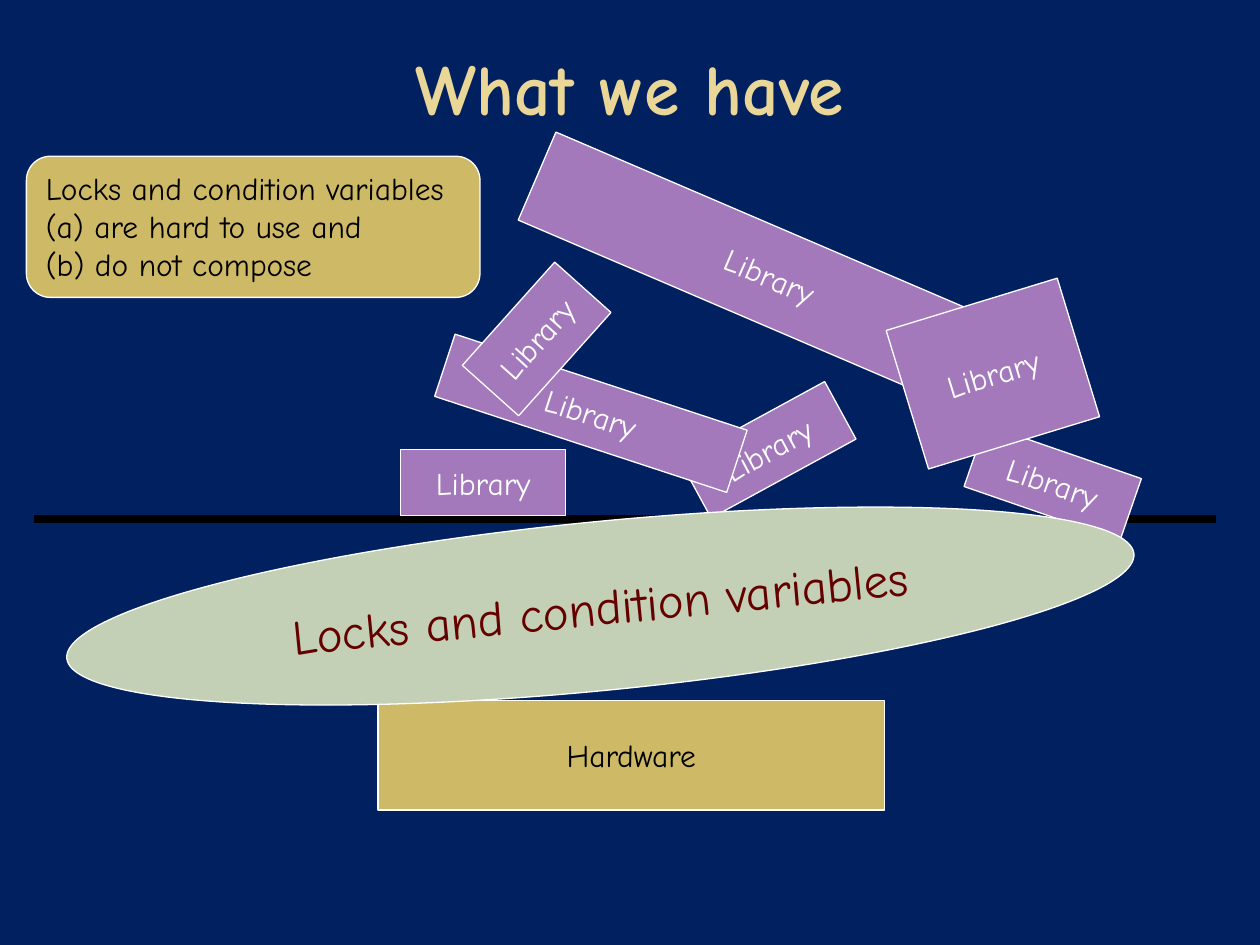
from lxml import etree
from pptx import Presentation
from pptx.dml.color import RGBColor
from pptx.enum.shapes import MSO_CONNECTOR, MSO_SHAPE
from pptx.enum.text import MSO_ANCHOR, PP_ALIGN
from pptx.oxml.ns import qn
from pptx.util import Inches, Pt

RECT = MSO_SHAPE.RECTANGLE
ELLIPSE = MSO_SHAPE.OVAL
CALLOUT = MSO_SHAPE.ROUNDED_RECTANGULAR_CALLOUT
STRAIGHT = MSO_CONNECTOR.STRAIGHT
CENTER, LEFT = PP_ALIGN.CENTER, PP_ALIGN.LEFT
TOP, MIDDLE = MSO_ANCHOR.TOP, MSO_ANCHOR.MIDDLE

FONT = "Comic Neue"
COLORS = {
    "background": "002060",
    "title": "EAD696",
    "gold": "CEB966",
    "library": "A379BB",
    "locks": "C4D0B5",
    "locks_text": "640000",
    "white": "FFFFFF",
    "black": "000000",
}
LIBRARIES = [
    (3.18, 3.57, 1.31, 0.52, 0),
    (5.44, 3.31, 1.31, 0.52, 331.4),
    (7.7, 3.57, 1.31, 0.52, 19.1),
    (3.47, 3.02, 2.44, 0.52, 18.2),
    (3.71, 2.39, 1.1, 0.6, 311.8),
    (4.1, 1.81, 4.02, 0.76, 23.2),
    (7.17, 2.39, 1.42, 1.15, 343),
]


def rgb(name):
    """Return the named colour."""
    return RGBColor.from_string(COLORS[name])


def write_text(sp, text, size, color, align=CENTER, anchor=MIDDLE, wrap=False, bold=False):
    """Fill a shape with one formatted paragraph."""
    tf = sp.text_frame
    tf.word_wrap = wrap
    tf.vertical_anchor = anchor
    p = tf.paragraphs[0]
    p.text = text
    p.alignment = align
    for r in p.runs:
        r.font.name = FONT
        r.font.size = Pt(size)
        r.font.bold = bold
        r.font.color.rgb = rgb(color)


def add_title(s, text):
    """Add the slide title."""
    sp = s.shapes.add_textbox(Inches(0.5), Inches(0.3), Inches(9), Inches(1.25))
    write_text(sp, text, 41, "title", anchor=TOP, wrap=True, bold=True)


def add_block(s, kind, box, fill, rotation=0):
    """Add a filled shape with a thin white outline."""
    sp = s.shapes.add_shape(kind, *(Inches(v) for v in box))
    sp.rotation = rotation
    sp.shadow.inherit = False
    sp.fill.solid()
    sp.fill.fore_color.rgb = rgb(fill)
    sp.line.color.rgb = rgb("white")
    sp.line.width = Pt(0.75)
    return sp


def add_ground(s):
    """Add the thick horizontal line under the libraries."""
    line = s.shapes.add_connector(
        STRAIGHT, Inches(0.27), Inches(4.12), Inches(9.65), Inches(4.12))
    line.line.color.rgb = rgb("black")
    line.line.width = Pt(4.5)
    etree.SubElement(line._element.spPr, qn("a:effectLst"))


def add_callout(s, text):
    """Add the rounded callout with its remark."""
    sp = add_block(s, CALLOUT, (0.21, 1.24, 3.6, 1.12), "gold")
    for i, value in enumerate((0.25, 0.5, 0.17)):
        sp.adjustments[i] = value
    write_text(sp, text, 18, "black", align=LEFT, anchor=TOP, wrap=True)


def main():
    """Build the slide and save it."""
    prs = Presentation()
    prs.slide_width, prs.slide_height = Inches(10), Inches(7.5)
    s = prs.slides.add_slide(prs.slide_layouts[6])
    s.background.fill.solid()
    s.background.fill.fore_color.rgb = rgb("background")

    add_ground(s)
    add_title(s, "What we have")
    hardware = add_block(s, RECT, (3, 5.56, 4.02, 0.87), "gold")
    write_text(hardware, "Hardware", 18, "black")
    for *box, rotation in LIBRARIES:
        library = add_block(s, RECT, box, "library", rotation)
        write_text(library, "Library", 18, "white")
    locks = add_block(s, ELLIPSE, (0.51, 4.14, 8.51, 1.34), "locks", 354.4)
    write_text(locks, "Locks and condition variables", 28, "locks_text")
    add_callout(s, "Locks and condition variables\n(a) are hard to use and\n(b) do not compose")
    prs.save("out.pptx")


if __name__ == "__main__":
    main()
